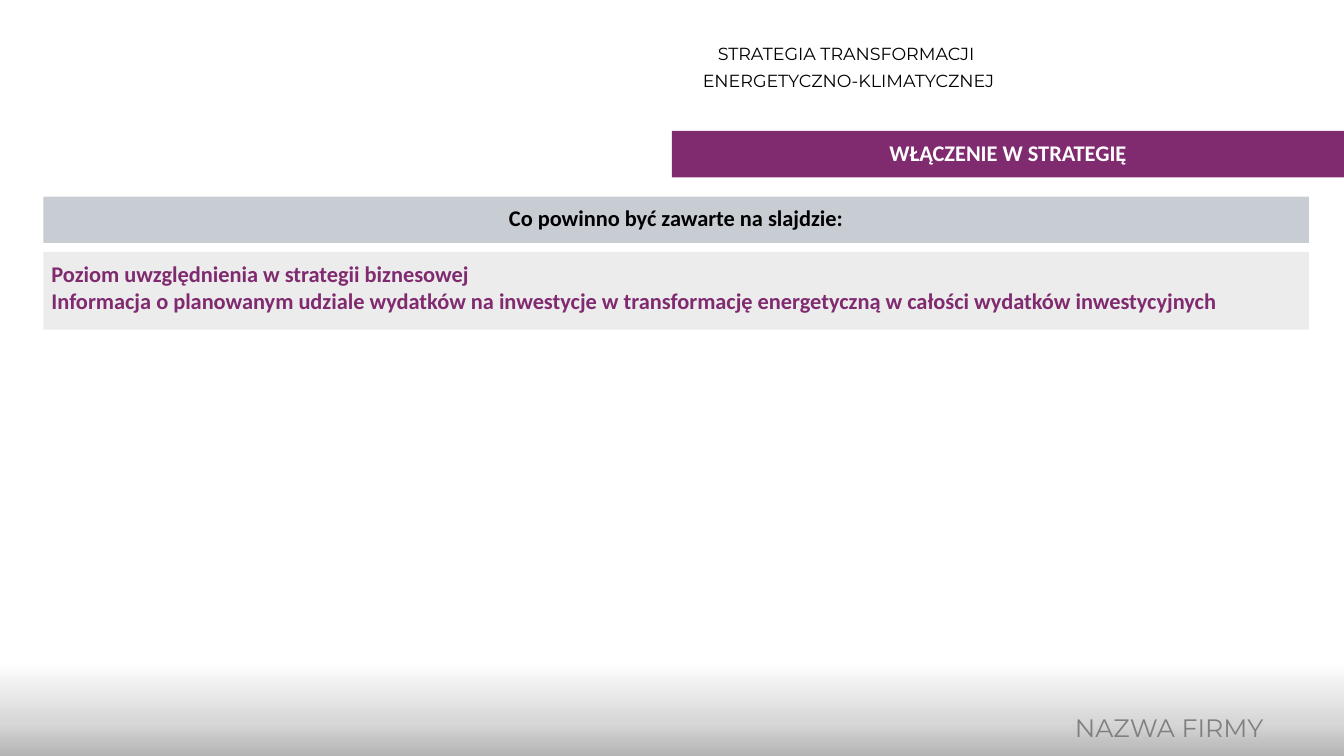
from copy import deepcopy
from dataclasses import dataclass
from typing import Optional

from lxml import etree
from pptx import Presentation
from pptx.dml.color import RGBColor
from pptx.enum.shapes import MSO_SHAPE
from pptx.enum.text import MSO_ANCHOR, PP_ALIGN
from pptx.oxml.ns import qn
from pptx.util import Inches, Pt

RECTANGLE = MSO_SHAPE.RECTANGLE
TOP, MIDDLE = MSO_ANCHOR.TOP, MSO_ANCHOR.MIDDLE
LEFT, CENTER, RIGHT = PP_ALIGN.LEFT, PP_ALIGN.CENTER, PP_ALIGN.RIGHT

BLACK = RGBColor(0x00, 0x00, 0x00)
WHITE = RGBColor(0xFF, 0xFF, 0xFF)
GRAY = RGBColor(0x80, 0x80, 0x80)
PLUM = RGBColor(0x80, 0x2A, 0x70)
SLATE = RGBColor(0x44, 0x54, 0x6A)
SILVER = RGBColor(0xBF, 0xBF, 0xBF)
FOOTER_STOPS = (
    (0, RGBColor(0x97, 0x97, 0x97)),
    (0.5, RGBColor(0xD7, 0xD7, 0xD7)),
    (1, WHITE),
)

SLIDE_WIDTH, SLIDE_HEIGHT = Inches(13.33), Inches(7.5)
PANEL_INSET = Inches(0.08)
PANEL_OPACITY = 29


@dataclass(frozen=True)
class Area:
    """A place on the slide, in percent of its width and height."""
    left: float
    top: float
    width: float
    height: float

    def emu(self) -> tuple[int, int, int, int]:
        return (
            round(SLIDE_WIDTH * self.left / 100),
            round(SLIDE_HEIGHT * self.top / 100),
            round(SLIDE_WIDTH * self.width / 100),
            round(SLIDE_HEIGHT * self.height / 100),
        )


@dataclass(frozen=True)
class TextStyle:
    font: str
    size: float
    color: RGBColor
    align: PP_ALIGN
    bold: bool = False
    line_spacing: Optional[float] = None


@dataclass(frozen=True)
class Label:
    area: Area
    text: str
    style: TextStyle


@dataclass(frozen=True)
class Panel(Label):
    fill: RGBColor
    opacity: int = 100


def panel_style(color: RGBColor, align: PP_ALIGN) -> TextStyle:
    return TextStyle("Calibri", 16, color, align, bold=True)


FOOTER_AREA = Area(0, 87.6, 100, 15.87)
LABELS = (
    Label(Area(72.17, 92.13, 22.58, 8.8), "NAZWA FIRMY",
          TextStyle("Montserrat", 18, GRAY, RIGHT, line_spacing=0.9)),
    Label(Area(43.51, 4, 39.23, 8.93),
          "STRATEGIA TRANSFORMACJI \vENERGETYCZNO-KLIMATYCZNEJ",
          TextStyle("Montserrat", 12.5, BLACK, CENTER, line_spacing=1.3)),
)
PANELS = (
    Panel(Area(3.23, 26, 94.15, 6.13), "Co powinno być zawarte na slajdzie:",
          panel_style(BLACK, CENTER), SLATE, PANEL_OPACITY),
    Panel(Area(3.23, 33.33, 94.15, 10.27),
          "Poziom uwzględnienia w strategii biznesowej\n"
          "Informacja o planowanym udziale wydatków na inwestycje "
          "w transformację energetyczną w całości wydatków inwestycyjnych",
          panel_style(PLUM, LEFT), SILVER, PANEL_OPACITY),
    Panel(Area(50, 17.33, 50, 6.13), "WŁĄCZENIE W STRATEGIĘ",
          panel_style(WHITE, CENTER), PLUM),
)


def write_text(frame, text: str, style: TextStyle, anchor: MSO_ANCHOR) -> None:
    frame.text = text
    frame.word_wrap = True
    frame.vertical_anchor = anchor
    for paragraph in frame.paragraphs:
        paragraph.alignment = style.align
        if style.line_spacing:
            paragraph.line_spacing = style.line_spacing
        for run in paragraph.runs:
            run.font.name = style.font
            run.font.size = Pt(style.size)
            run.font.bold = style.bold
            run.font.color.rgb = style.color


def add_rectangle(slide, area: Area):
    rectangle = slide.shapes.add_shape(RECTANGLE, *area.emu())
    rectangle.shadow.inherit = False
    rectangle.line.fill.background()
    return rectangle


def add_footer(slide) -> None:
    """Draw the band that fades upwards from gray to white."""
    fill = add_rectangle(slide, FOOTER_AREA).fill
    fill.gradient()
    fill.gradient_angle = 90
    first_stop = fill._fill._gradFill.gsLst[0]
    first_stop.addnext(deepcopy(first_stop))
    for stop, (position, color) in zip(fill.gradient_stops, FOOTER_STOPS):
        stop.position = position
        stop.color.rgb = color


def add_label(slide, label: Label) -> None:
    box = slide.shapes.add_textbox(*label.area.emu())
    write_text(box.text_frame, label.text, label.style, MIDDLE)


def add_panel(slide, panel: Panel) -> None:
    rectangle = add_rectangle(slide, panel.area)
    rectangle.fill.solid()
    rectangle.fill.fore_color.rgb = panel.fill
    if panel.opacity < 100:
        color = rectangle.fill._xPr.find(qn("a:solidFill"))[0]
        etree.SubElement(color, qn("a:alpha"), val=str(panel.opacity * 1000))
    frame = rectangle.text_frame
    frame.margin_left = frame.margin_right = PANEL_INSET
    frame.margin_top = frame.margin_bottom = PANEL_INSET
    write_text(frame, panel.text, panel.style, TOP)


def main() -> None:
    presentation = Presentation()
    presentation.slide_width = SLIDE_WIDTH
    presentation.slide_height = SLIDE_HEIGHT
    slide = presentation.slides.add_slide(presentation.slide_layouts[6])
    add_footer(slide)
    for label in LABELS:
        add_label(slide, label)
    for panel in PANELS:
        add_panel(slide, panel)
    presentation.save("out.pptx")


if __name__ == "__main__":
    main()
